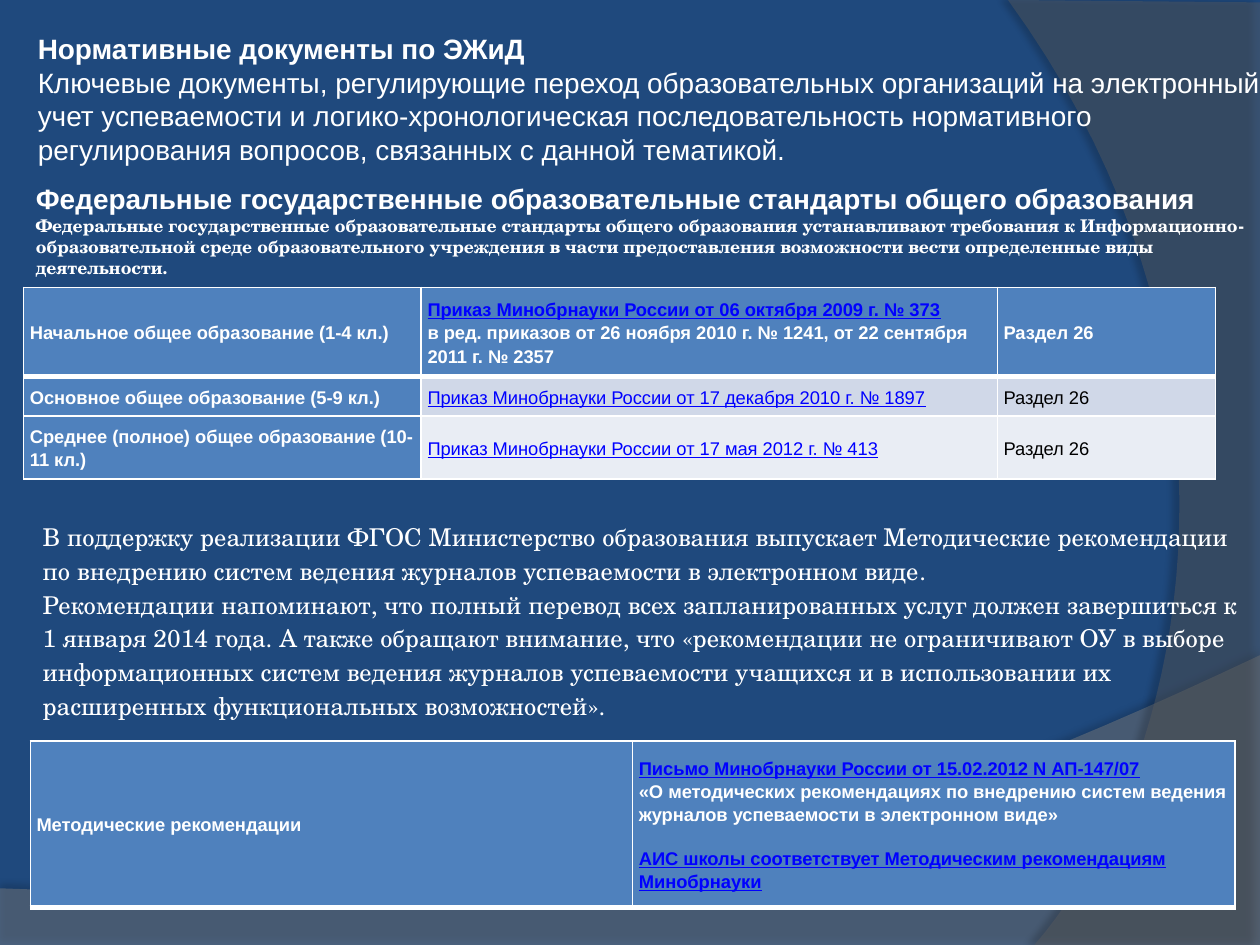
"""Build the slide on the rules for electronic school journals."""
from lxml.etree import SubElement
from pptx import Presentation
from pptx.dml.color import RGBColor as RGB
from pptx.enum.text import MSO_ANCHOR as Anchor, MSO_AUTO_SIZE as Auto, PP_ALIGN as Align
from pptx.oxml.ns import qn
from pptx.util import Pt

INK = {"back": "1F497D", "wave": "7F7F7F", "arc": "5E5E5E", "white": "FFFFFF",
       "black": "000000", "link": "0000FF", "head": "4F81BD",
       "band": "D0D8E8", "pale": "E9EDF4"}
SANS, SERIF = "Arial", "TeX Gyre Schola"


def style(par, size, face, ink="white", bold=False, under=False, gap=1.0):
    par.alignment = Align.LEFT
    par.line_spacing = gap
    for run in par.runs:
        font = run.font
        font.size, font.name = Pt(size), face
        font.bold, font.underline = bold, under
        font.color.rgb = RGB.from_string(INK[ink])


def shade(parent, ink, alpha=None):
    color = SubElement(parent, qn("a:srgbClr"), val=INK[ink])
    if alpha:
        SubElement(color, qn("a:alpha"), val=str(alpha * 1000))


deck = Presentation()
deck.slide_width, deck.slide_height = Pt(720), Pt(540)
slide = deck.slides.add_slide(deck.slide_layouts[5])
slide.background.fill.solid()
slide.background.fill.fore_color.rgb = RGB.from_string(INK["back"])
shapes = slide.shapes

waves = [
    ("wave", 45, [(0, 507.6), (0, 540.7), (720, 540.7)],
     [(720, 374.4), (402.5, 524.9), (281.5, 517.7), (0, 507.6)], (35, 3.5, 270)),
    ("arc", 40, [(720, 1.4), (720, 540)],
     [(591.1, 540), (673.2, 445.7), (733, 216), (576, 0)], (45, 4, 180)),
]
for ink, alpha, edge, bend, (dark, dist, turn) in waves:
    curve = []
    for step in range(41):
        t = step / 40
        parts = ((1 - t) ** 3, 3 * t * (1 - t) ** 2, 3 * t * t * (1 - t), t ** 3)
        curve.append(tuple(sum(k * pt[axis] for k, pt in zip(parts, bend))
                           for axis in (0, 1)))
    dots = [(Pt(x), Pt(y)) for x, y in edge + curve]
    pen = shapes.build_freeform(*dots[0])
    pen.add_line_segments(dots[1:], close=True)
    form = pen.convert_to_shape()
    form.line.fill.background()
    form.fill.solid()
    form.fill.fore_color.rgb = RGB.from_string(INK[ink])
    color = form.element.spPr.find(qn("a:solidFill"))[0]
    SubElement(color, qn("a:alpha"), val=str(alpha * 1000))
    form.shadow.inherit = False
    glow = SubElement(form.element.spPr.find(qn("a:effectLst")), qn("a:outerShdw"),
                      blurRad=str(Pt(4)), dist=str(Pt(dist)), dir=str(turn * 60000),
                      algn="ctr", rotWithShape="0")
    shade(glow, "black", dark)

title = shapes.title
shapes.element.append(title.element)
blocks = [
    (title, (14.4, 14.4, 725.8, 85), Anchor.TOP, 1.0, [
        ("Нормативные документы по ЭЖиД", 16, SANS, True),
        ("Ключевые документы, регулирующие переход образовательных организаций на "
         "электронный учет успеваемости и логико-хронологическая последовательность "
         "нормативного регулирования вопросов, связанных с данной тематикой.",
         16, SANS, False)]),
    (None, (13.5, 99.4, 705.6, 63.4), Anchor.MIDDLE, 1.0, [
        ("Федеральные государственные образовательные стандарты общего образования",
         16, SANS, True),
        ("Федеральные государственные образовательные стандарты общего образования "
         "устанавливают требования к Информационно-образовательной среде "
         "образовательного учреждения в части предоставления возможности вести "
         "определенные виды деятельности.", 10, SERIF, True)]),
    (None, (17.3, 292.3, 697.7, 124.6), Anchor.TOP, 1.15, [
        ("В поддержку реализации ФГОС Министерство образования выпускает Методические "
         "рекомендации по внедрению систем ведения журналов успеваемости в "
         "электронном виде.", 14, SERIF, False),
        ("Рекомендации напоминают, что полный перевод всех запланированных услуг "
         "должен завершиться к 1 января 2014 года. А также обращают внимание, что "
         "«рекомендации не ограничивают ОУ в выборе информационных систем ведения "
         "журналов успеваемости учащихся и в использовании их расширенных "
         "функциональных возможностей».", 14, SERIF, False)]),
]
for box, place, anchor, gap, lines in blocks:
    spot = [Pt(v) for v in place]
    box = box or shapes.add_textbox(*spot)
    box.left, box.top, box.width, box.height = spot
    frame = box.text_frame
    frame.word_wrap, frame.auto_size = True, Auto.NONE
    frame.vertical_anchor = anchor
    frame.text = "\n".join(line[0] for line in lines)
    for par, (words, size, face, bold) in zip(frame.paragraphs, lines):
        style(par, size, face, bold=bold, gap=gap)

tables = [
    ((17.3, 423.4), (344.2, 344.2), (95,), [
        ["Методические рекомендации",
         "Письмо Минобрнауки России от 15.02.2012 N АП-147/07\n"
         "«О методических рекомендациях по внедрению систем ведения журналов "
         "успеваемости в электронном виде»\n"
         "АИС школы соответствует Методическим рекомендациям Минобрнауки"]]),
    ((13.5, 164.2), (227.2, 329.2, 124.6), (51, 22.4, 36), [
        ["Начальное общее образование (1-4 кл.)",
         "Приказ Минобрнауки России от 06 октября 2009 г. № 373\n"
         "в ред. приказов от 26 ноября 2010 г. № 1241, от 22 сентября 2011 г. № 2357",
         "Раздел 26"],
        ["Основное общее образование (5-9 кл.)",
         "Приказ Минобрнауки России от 17 декабря 2010 г. № 1897", "Раздел 26"],
        ["Среднее (полное) общее образование (10-11 кл.)",
         "Приказ Минобрнауки России от 17 мая 2012 г. № 413", "Раздел 26"]]),
]
for (left, top), widths, heights, rows in tables:
    grid = shapes.add_table(len(rows), len(widths), Pt(left), Pt(top),
                            Pt(sum(widths)), Pt(sum(heights))).table
    for col, width in zip(grid.columns, widths):
        col.width = Pt(width)
    for row, height in zip(grid.rows, heights):
        row.height = Pt(height)
    for r, row in enumerate(rows):
        for c, words in enumerate(row):
            cell = grid.cell(r, c)
            main = r == 0 or c == 0
            cell.margin_left = cell.margin_right = Pt(3.6)
            cell.margin_top = cell.margin_bottom = Pt(3.6)
            cell.vertical_anchor = Anchor.MIDDLE
            props = cell._tc.get_or_add_tcPr()
            sides = {"L": 1, "R": 1, "T": 3 if r == 1 else 1, "B": 3 if r == 0 else 1}
            for side, wide in sides.items():
                line = SubElement(props, qn("a:ln" + side), w=str(Pt(wide)))
                shade(SubElement(line, qn("a:solidFill")), "white")
            cell.fill.solid()
            fill = "head" if main else ("pale", "band")[r % 2]
            cell.fill.fore_color.rgb = RGB.from_string(INK[fill])
            cell.text_frame.text = words
            for n, par in enumerate(cell.text_frame.paragraphs):
                link = c == 1 and n != 1
                ink = "link" if link else "white" if main else "black"
                style(par, 10.5, SANS, ink, main, link, 1.15)
                if n == 2:
                    par.space_before = Pt(11.5)

deck.save("out.pptx")
